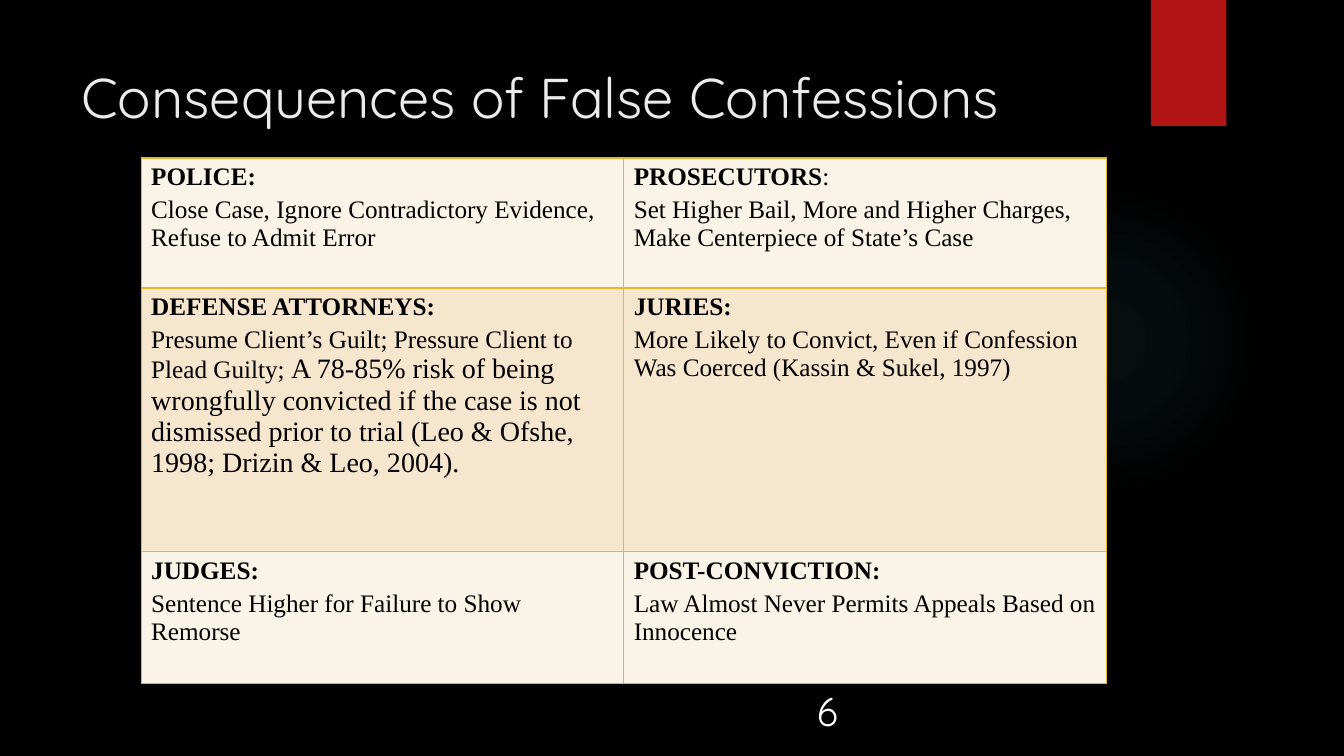
from lxml.etree import SubElement
from pptx import Presentation
from pptx.dml.color import RGBColor
from pptx.enum.shapes import MSO_SHAPE
from pptx.enum.text import MSO_ANCHOR, MSO_AUTO_SIZE, PP_ALIGN
from pptx.oxml import parse_xml
from pptx.oxml.ns import nsdecls, qn
from pptx.util import Inches, Pt

COLORS = {
    "background": "000000", "glow": "50B9C1", "ribbon": "B01513",
    "title": "EBEBEB", "number": "FFFFFF", "body": "000000",
    "light": "FAF3E8", "dark": "F5E6CD", "border": "E6B729",
}
CONSEQUENCES = [
    [("POLICE:", "", [("Close Case, Ignore Contradictory Evidence, Refuse to Admit Error", 18)]),
     ("PROSECUTORS", ":", [("Set Higher Bail, More and Higher Charges, Make Centerpiece of State’s Case", 18)])],
    [("DEFENSE ATTORNEYS:", "", [
        ("Presume Client’s Guilt; Pressure Client to Plead Guilty; ", 18),
        ("A 78-85% risk of being wrongfully convicted if the case is not dismissed "
         "prior to trial (Leo & Ofshe, 1998; Drizin & Leo, 2004).", 20)]),
     ("JURIES:", "", [("More Likely to Convict, Even if Confession Was Coerced (Kassin & Sukel, 1997)", 18)])],
    [("JUDGES:", "", [("Sentence Higher for Failure to Show Remorse", 18)]),
     ("POST-CONVICTION:", "", [("Law Almost Never Permits Appeals Based on Innocence", 18)])],
]
ROW_HEIGHTS = [15.5, 31.4, 15.7]
GRID = Inches(7.5) / 90


def cells(*counts):
    return [round(count * GRID) for count in counts]


def style(font, face, size, color, bold=False):
    font.name, font.size, font.bold = face, Pt(size), bold
    font.color.rgb = RGBColor.from_string(COLORS[color])


deck = Presentation()
deck.slide_width, deck.slide_height = cells(160, 90)
slide = deck.slides.add_slide(deck.slide_layouts[5])
slide.background.fill.solid()
slide.background.fill.fore_color.rgb = RGBColor.from_string(COLORS["background"])

glow = slide.shapes.add_shape(MSO_SHAPE.OVAL, *cells(113, 22, 37, 37))
ribbon = slide.shapes.add_shape(MSO_SHAPE.RECTANGLE, *cells(137, 0, 9, 15))
for decoration in (glow, ribbon):
    decoration.shadow.inherit = False
    decoration.line.fill.background()
ribbon.fill.solid()
ribbon.fill.fore_color.rgb = RGBColor.from_string(COLORS["ribbon"])
stops = "".join(
    f'<a:gs pos="{position * 1000}"><a:srgbClr val="{COLORS["glow"]}">'
    f'<a:alpha val="{alpha * 1000}"/></a:srgbClr></a:gs>'
    for position, alpha in [(0, 7), (36, 6), (69, 0)])
glow.element.spPr.find(qn("a:prstGeom")).addnext(parse_xml(
    f'<a:gradFill {nsdecls("a")} rotWithShape="1"><a:gsLst>{stops}</a:gsLst>'
    '<a:path path="circle"><a:fillToRect l="50000" t="50000" r="50000" b="50000"/>'
    '</a:path></a:gradFill>'))

heading = slide.shapes.title
heading.left, heading.top, heading.width, heading.height = cells(8.5, 6, 123.5, 11)
heading.text_frame.text = "Consequences of False Confessions"
heading.text_frame.auto_size = MSO_AUTO_SIZE.NONE
heading.text_frame.vertical_anchor = MSO_ANCHOR.MIDDLE
heading.text_frame.paragraphs[0].alignment = PP_ALIGN.LEFT
style(heading.text_frame.paragraphs[0].runs[0].font, "Quicksand", 40, "title")

consequences = slide.shapes.add_table(
    3, 2, *cells(16.8, 18.8, 114.9, sum(ROW_HEIGHTS))).table
for row, height in zip(consequences.rows, ROW_HEIGHTS):
    row.height = cells(height)[0]

for row_index, parties in enumerate(CONSEQUENCES):
    for column_index, (party, suffix, effects) in enumerate(parties):
        cell = consequences.cell(row_index, column_index)
        properties = cell._tc.get_or_add_tcPr()
        for side in ("lnL", "lnR", "lnT", "lnB"):
            border = SubElement(properties, qn(f"a:{side}"), w=str(Pt(1)))
            border_fill = SubElement(border, qn("a:solidFill"))
            SubElement(border_fill, qn("a:srgbClr"), val=COLORS["border"])
        cell.fill.solid()
        cell.fill.fore_color.rgb = RGBColor.from_string(
            COLORS["dark" if row_index % 2 else "light"])

        party_line = cell.text_frame.paragraphs[0]
        party_line.text = party
        style(party_line.runs[0].font, "Times New Roman", 18, "body", True)
        effect_line = cell.text_frame.add_paragraph()
        effect_line.space_before = Pt(3.6)
        pieces = [(party_line, suffix, 18)] if suffix else []
        pieces += [(effect_line, wording, size) for wording, size in effects]
        for line, wording, size in pieces:
            run = line.add_run()
            run.text = wording
            style(run.font, "Times New Roman", size, "body")

page_number = slide.shapes.add_textbox(*cells(86, 82, 25, 6)).text_frame
page_number.word_wrap = True
page_number.vertical_anchor = MSO_ANCHOR.BOTTOM
page_number.text = "6"
page_number.paragraphs[0].alignment = PP_ALIGN.CENTER
style(page_number.paragraphs[0].runs[0].font, "Quicksand", 28, "number")

deck.save("out.pptx")
